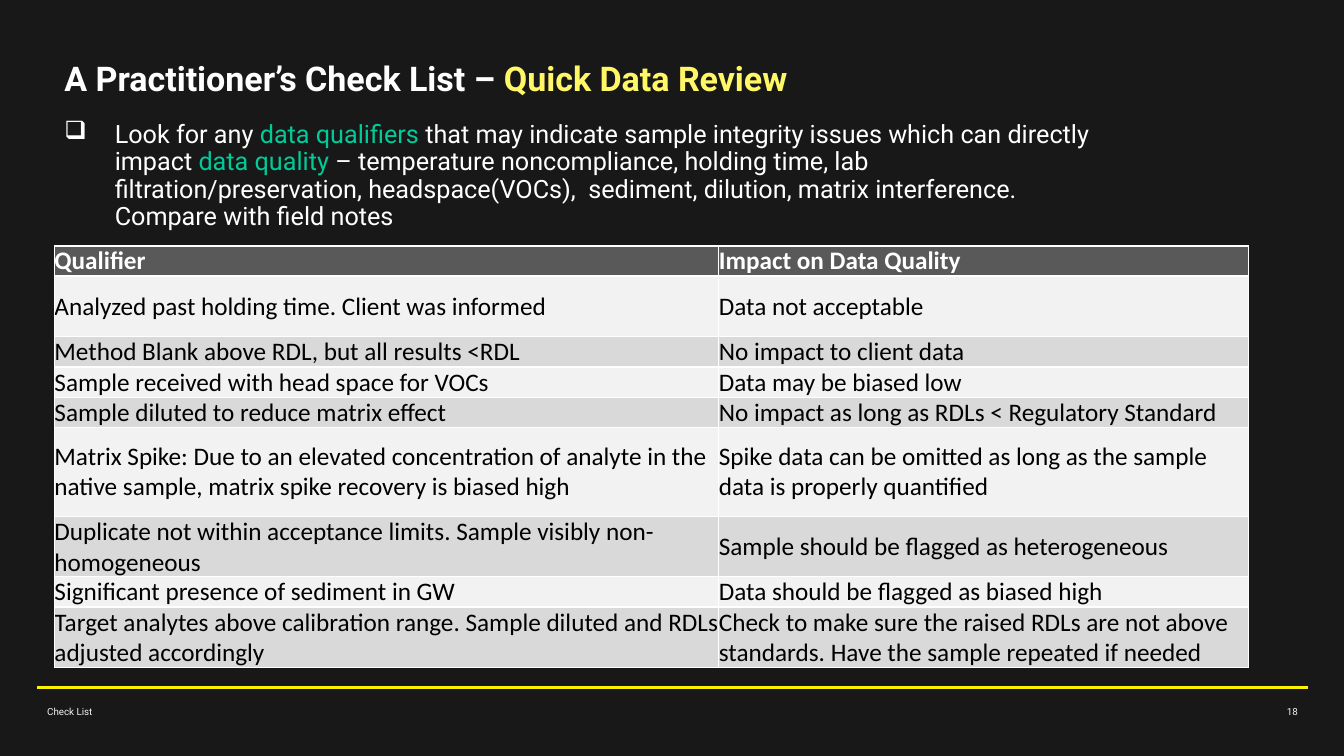
from dataclasses import dataclass

from lxml.etree import SubElement
from pptx import Presentation
from pptx.dml.color import RGBColor
from pptx.enum.shapes import MSO_CONNECTOR
from pptx.enum.text import MSO_ANCHOR, PP_ALIGN
from pptx.oxml.ns import qn
from pptx.util import Inches, Pt


@dataclass(frozen=True)
class Theme:
    background: str = "181818"
    white: str = "FFFFFF"
    black: str = "000000"
    title_accent: str = "FFF766"
    body_accent: str = "00CC99"
    rule: str = "FFF200"
    footer: str = "F2F2F2"
    header_fill: str = "595959"
    row_fills: tuple = ("F2F2F2", "D9D9D9")
    text_font: str = "Roboto"
    table_font: str = "Calibri"
    title_size: float = 24.3
    body_size: float = 18
    footer_size: float = 7


class SlideBuilder:
    def __init__(self, slide, theme):
        self.slide = slide
        self.theme = theme
        slide.background.fill.solid()
        slide.background.fill.fore_color.rgb = RGBColor.from_string(theme.background)

    def text(self, box, parts, size, bold=False, align=PP_ALIGN.LEFT,
             line_spacing=None, space_after=0, bullet=None):
        frame = self.slide.shapes.add_textbox(*map(Inches, box)).text_frame
        frame.word_wrap = True
        paragraph = frame.paragraphs[0]
        paragraph.alignment = align
        paragraph.space_after = Pt(space_after)
        if line_spacing:
            paragraph.line_spacing = line_spacing
        if bullet:
            properties = paragraph._p.get_or_add_pPr()
            properties.set("marL", str(Inches(0.5)))
            properties.set("indent", str(-Inches(0.5)))
            SubElement(properties, qn("a:buChar")).set("char", bullet)
        self.font(paragraph, self.theme.text_font, size, bold)
        for words, color in parts:
            run = paragraph.add_run()
            run.text = words
            run.font.color.rgb = RGBColor.from_string(color)

    def font(self, paragraph, name, size, bold):
        paragraph.font.name = name
        paragraph.font.size = Pt(size)
        paragraph.font.bold = bold

    def line(self, start, end, color, width):
        rule = self.slide.shapes.add_connector(
            MSO_CONNECTOR.STRAIGHT, *map(Inches, start + end))
        rule.line.color.rgb = RGBColor.from_string(color)
        rule.line.width = Pt(width)
        SubElement(rule._element.spPr, qn("a:effectLst"))

    def table(self, left, top, widths, heights, rows):
        table = self.slide.shapes.add_table(
            len(rows), len(widths), Inches(left), Inches(top),
            Inches(sum(widths)), Inches(sum(heights))).table
        table.horz_banding = False
        for column, width in zip(table.columns, widths):
            column.width = Inches(width)
        for index, (height, row) in enumerate(zip(heights, rows)):
            table.rows[index].height = Inches(height)
            for column, words in enumerate(row):
                self.cell(table.cell(index, column), words, index)

    def cell(self, cell, words, row):
        theme = self.theme
        header = row == 0
        cell.margin_left = cell.margin_right = 0
        cell.margin_top = cell.margin_bottom = 0
        cell.vertical_anchor = MSO_ANCHOR.MIDDLE
        self.borders(cell, row)
        cell.fill.solid()
        fill = theme.header_fill if header else theme.row_fills[(row - 1) % 2]
        cell.fill.fore_color.rgb = RGBColor.from_string(fill)
        cell.text = words
        paragraph = cell.text_frame.paragraphs[0]
        self.font(paragraph, theme.table_font, theme.body_size, header)
        color = theme.white if header else theme.black
        paragraph.font.color.rgb = RGBColor.from_string(color)

    def borders(self, cell, row):
        properties = cell._tc.get_or_add_tcPr()
        for side in "LRTB":
            under_header = (row, side) in ((0, "B"), (1, "T"))
            border = SubElement(properties, qn(f"a:ln{side}"))
            border.set("w", str(Pt(1.5 if under_header else 1)))
            solid = SubElement(border, qn("a:solidFill"))
            SubElement(solid, qn("a:srgbClr")).set("val", self.theme.white)


QUALIFIERS = [
    ("Qualifier", "Impact on Data Quality"),
    ("Analyzed past holding time. Client was informed", "Data not acceptable"),
    ("Method Blank above RDL, but all results <RDL", "No impact to client data"),
    ("Sample received with head space for VOCs", "Data may be biased low"),
    ("Sample diluted to reduce matrix effect",
     "No impact as long as RDLs < Regulatory Standard"),
    ("Matrix Spike: Due to an elevated concentration of analyte in the native "
     "sample, matrix spike recovery is biased high",
     "Spike data can be omitted as long as the sample data is properly quantified"),
    ("Duplicate not within acceptance limits. Sample visibly non-homogeneous",
     "Sample should be flagged as heterogeneous"),
    ("Significant presence of sediment in GW", "Data should be flagged as biased high"),
    ("Target analytes above calibration range. Sample diluted and RDLs adjusted "
     "accordingly",
     "Check to make sure the raised RDLs are not above standards. Have the sample "
     "repeated if needed"),
]


def main():
    theme = Theme()
    presentation = Presentation()
    presentation.slide_width = Inches(13.33)
    presentation.slide_height = Inches(7.5)
    builder = SlideBuilder(
        presentation.slides.add_slide(presentation.slide_layouts[6]), theme)

    builder.line((0.37, 6.82), (12.97, 6.82), theme.rule, 2.25)
    builder.text((0.54, 0.57, 7.86, 0.57), [
        ("A Practitioner’s Check List – ", theme.white),
        ("Quick Data Review", theme.title_accent),
    ], theme.title_size, bold=True, line_spacing=0.9)
    builder.text((0.37, 6.95, 7.01, 0.4), [("Check List", theme.footer)],
                 theme.footer_size, space_after=6)
    builder.text((9.97, 6.95, 3, 0.4), [("18", theme.footer)],
                 theme.footer_size, align=PP_ALIGN.RIGHT, space_after=6)
    builder.text((0.54, 1.16, 10.6, 1.49), [
        ("Look for any ", theme.white),
        ("data qualifiers ", theme.body_accent),
        ("that may indicate sample integrity issues which can directly impact ",
         theme.white),
        ("data quality ", theme.body_accent),
        ("– temperature noncompliance, holding time, lab filtration/preservation, "
         "headspace(VOCs),  sediment, dilution, matrix interference. "
         "Compare with field notes", theme.white),
    ], theme.body_size, line_spacing=0.9, bullet="❑")
    builder.table(0.54, 2.44, (6.59, 5.25),
                  (0.3, 0.6, 0.3, 0.3, 0.3, 0.88, 0.59, 0.3, 0.59), QUALIFIERS)

    presentation.save("out.pptx")


if __name__ == "__main__":
    main()
